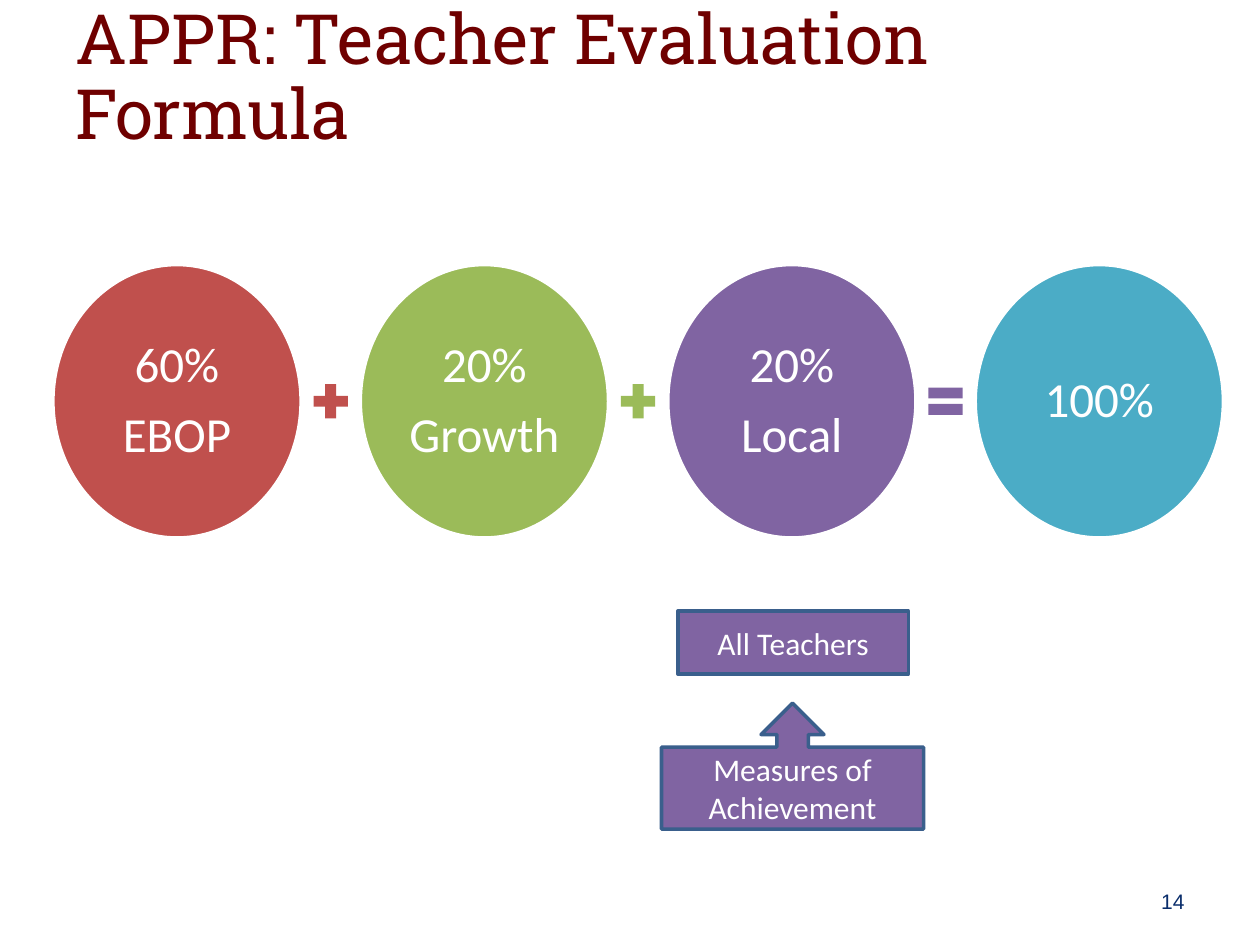
from pptx import Presentation
from pptx.dml.color import RGBColor
from pptx.enum.shapes import MSO_SHAPE
from pptx.enum.text import MSO_ANCHOR, MSO_AUTO_SIZE, PP_ALIGN
from pptx.util import Inches, Pt

OVAL, PLUS, EQUAL = MSO_SHAPE.OVAL, MSO_SHAPE.MATH_PLUS, MSO_SHAPE.MATH_EQUAL
RECT, CALLOUT = MSO_SHAPE.RECTANGLE, MSO_SHAPE.UP_ARROW_CALLOUT
MIDDLE = MSO_ANCHOR.MIDDLE
LEFT, CENTER, RIGHT = PP_ALIGN.LEFT, PP_ALIGN.CENTER, PP_ALIGN.RIGHT
NO_AUTOFIT = MSO_AUTO_SIZE.NONE

WHITE = RGBColor(0xFF, 0xFF, 0xFF)
MAROON = RGBColor(0x6F, 0x00, 0x00)
NAVY = RGBColor(0x0A, 0x2D, 0x6B)
STEEL = RGBColor(0x3A, 0x5F, 0x8C)
RED = RGBColor(0xC0, 0x50, 0x4D)
GREEN = RGBColor(0x9B, 0xBB, 0x59)
PURPLE = RGBColor(0x80, 0x64, 0xA2)
TEAL = RGBColor(0x4B, 0xAC, 0xC6)


def add_shape(kind, x, y, w, h, fill, line=None):
    sp = slide.shapes.add_shape(kind, Inches(x), Inches(y), Inches(w), Inches(h))
    sp.shadow.inherit = False
    sp.fill.solid()
    sp.fill.fore_color.rgb = fill
    if line is None:
        sp.line.fill.background()
    else:
        sp.line.color.rgb = line
        sp.line.width = Pt(2)
    return sp


def set_text(sp, text, font, size, color, align):
    tf = sp.text_frame
    tf.word_wrap = True
    tf.auto_size = NO_AUTOFIT
    tf.vertical_anchor = MIDDLE
    tf.text = text
    for p in tf.paragraphs:
        p.alignment = align
        p.font.name = font
        p.font.size = Pt(size)
        p.font.color.rgb = color
    return tf


prs = Presentation()
prs.slide_width, prs.slide_height = Inches(10), Inches(7.5)
slide = prs.slides.add_slide(prs.slide_layouts[5])

# Title
title = slide.shapes.title
title.left, title.top = Inches(0.5), Inches(0.3)
title.width, title.height = Inches(9), Inches(0.66)
tf = set_text(title, "APPR: Teacher Evaluation Formula", "Roboto Slab", 39.6, MAROON, LEFT)
tf.paragraphs[0].line_spacing = 0.9

# Formula: circles, each followed by its operator
terms = [
    ("60%\nEBOP", RED, PLUS),
    ("20%\nGrowth", GREEN, PLUS),
    ("20%\nLocal", PURPLE, EQUAL),
    ("100%", TEAL, None),
]
for i, (text, color, operator) in enumerate(terms):
    x = 0.42 + 2.44 * i
    sp = add_shape(OVAL, x, 2.1, 1.97, 2.17, color, WHITE)
    tf = set_text(sp, text, "Calibri", 28, WHITE, CENTER)
    tf.margin_left = tf.margin_right = tf.margin_top = tf.margin_bottom = Inches(0.04)
    for p in tf.paragraphs:
        p.line_spacing = 0.9
        p.space_after = Pt(9.8)
    if operator is not None:
        add_shape(operator, x + 2.02, 3, 0.37, 0.37, color)

# Notes under the local measure
callout = add_shape(CALLOUT, 5.25, 5.58, 2.08, 1, PURPLE, STEEL)
set_text(callout, "Measures of Achievement", "Calibri", 18, WHITE, CENTER)
teachers = add_shape(RECT, 5.38, 4.85, 1.83, 0.5, PURPLE, STEEL)
set_text(teachers, "All Teachers", "Calibri", 18, WHITE, CENTER)

# Slide number
number = slide.shapes.add_textbox(Inches(7.17), Inches(6.95), Inches(2.33), Inches(0.4))
set_text(number, "14", "Arial", 12, NAVY, RIGHT)

prs.save("out.pptx")
